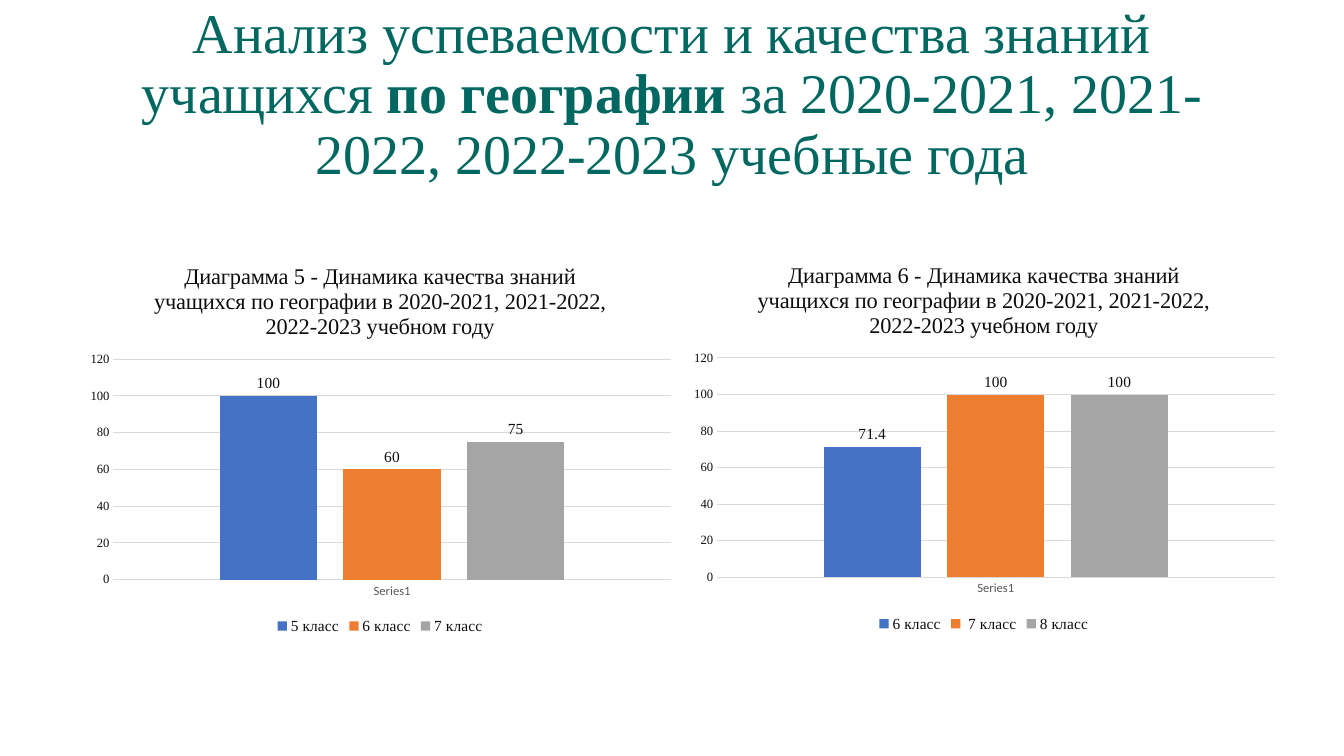
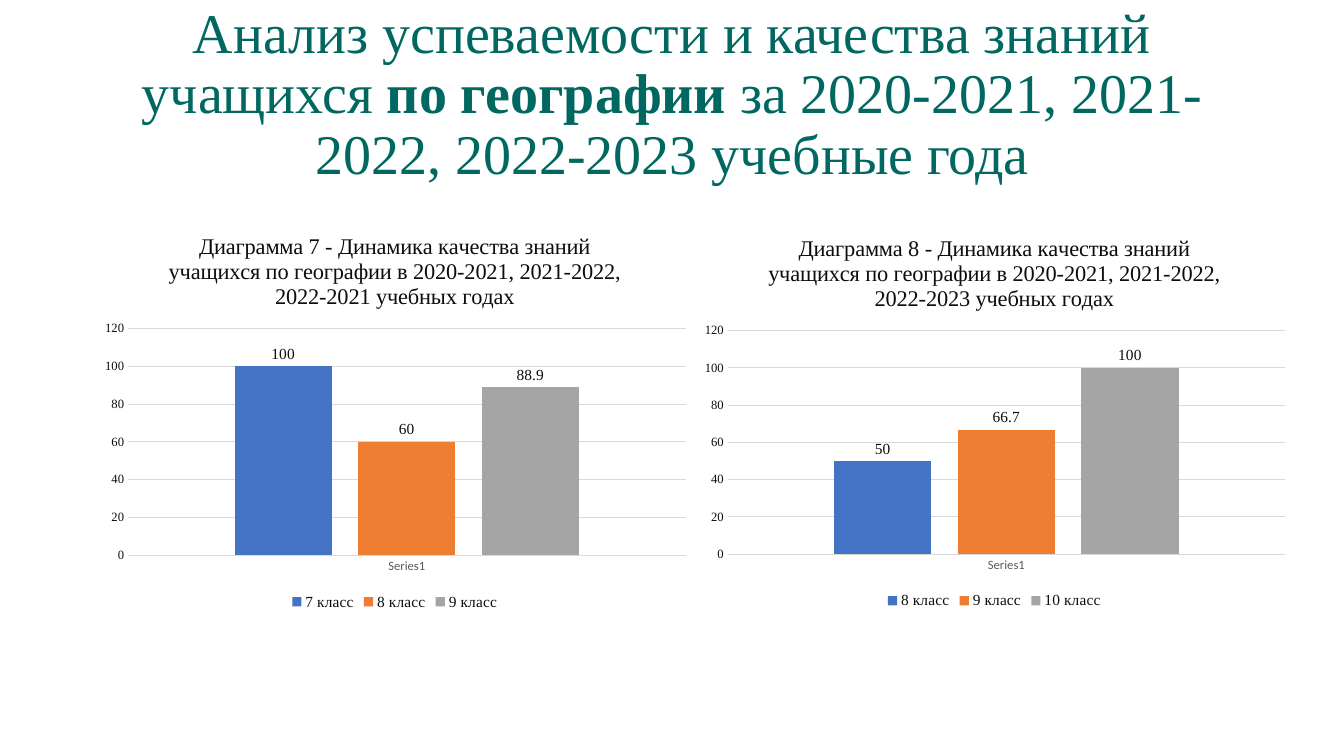
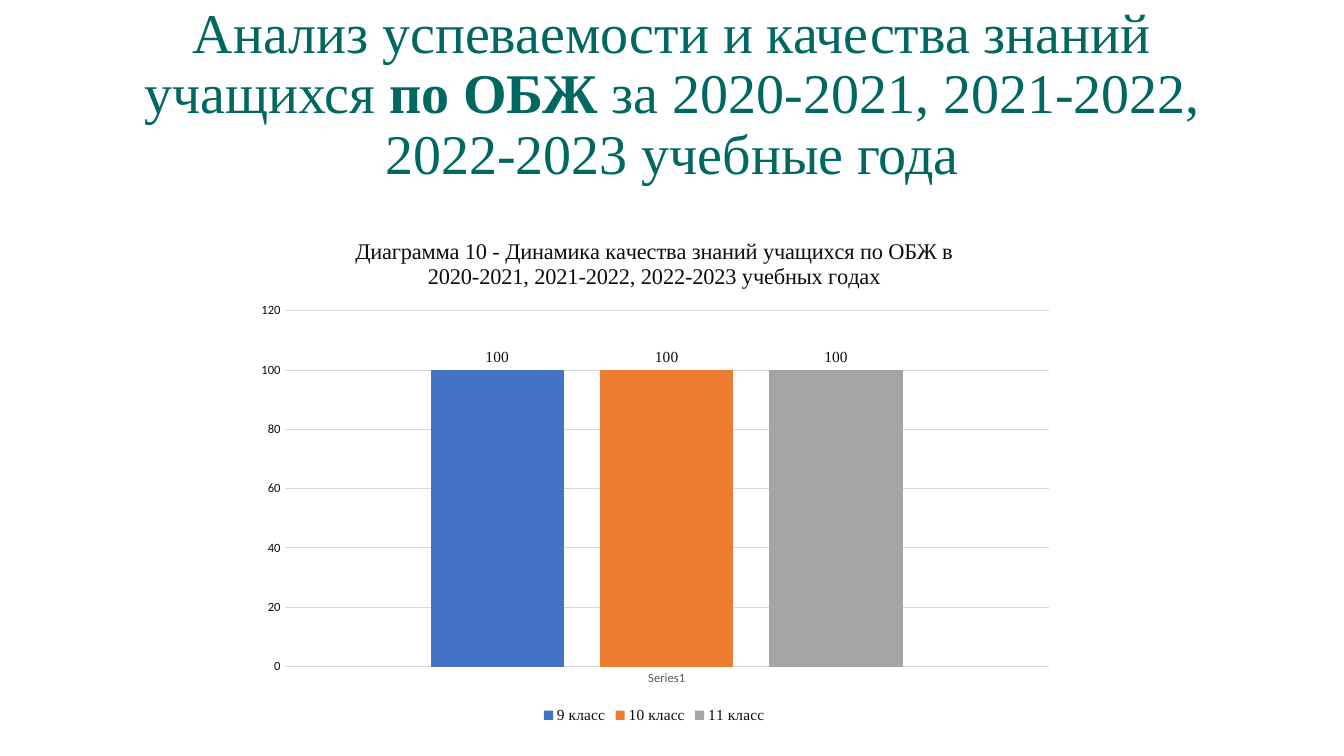
from lxml import etree
from pptx import Presentation
from pptx import util as u
from pptx.chart.data import CategoryChartData
from pptx.dml.color import RGBColor
from pptx.enum import chart as charts, text
from pptx.oxml.ns import qn

PX = 9525
SERIF = "Times New Roman"
SANS = "Calibri"
GREEN = RGBColor(0x00, 0x68, 0x61)
INK = RGBColor(0x0D, 0x0D, 0x0D)
GREY = RGBColor(0x59, 0x59, 0x59)
GRID = RGBColor(0xD9, 0xD9, 0xD9)
COLUMN_COLOURS = (
    RGBColor(0x44, 0x72, 0xC4),
    RGBColor(0xED, 0x7D, 0x31),
    RGBColor(0xA5, 0xA5, 0xA5),
)

# Margins of the plot inside its chart: left, top, right, bottom
HALF_MARGINS = (34, 109, 11, 56)
WIDE_MARGINS = (38, 89, 14, 58)

GEOGRAPHY = "учащихся по географии в 2020-2021, 2021-2022,"


def px(length):
    return u.Emu(length * PX)


def set_font(font, size, colour=INK, name=SERIF):
    font.name = name
    font.size = u.Pt(size)
    font.bold = False
    font.color.rgb = colour


def set_line(line, colour=GRID):
    line.color.rgb = colour
    line.width = u.Pt(0.75)


def add_page(deck, subject):
    """Add a page whose title has the subject in bold."""
    page = deck.slides.add_slide(deck.slide_layouts[5])
    box = page.shapes.title
    box.left, box.top, box.width, box.height = map(px, (88, 0, 1104, 50))
    frame = box.text_frame
    frame.auto_size = text.MSO_AUTO_SIZE.NONE
    frame.vertical_anchor = text.MSO_ANCHOR.TOP
    frame.word_wrap = True
    para = frame.paragraphs[0]
    para.alignment = text.PP_ALIGN.CENTER
    para.line_spacing = 0.9
    set_font(para.font, 40, GREEN)
    for words, bold in (
        ("Анализ успеваемости и качества знаний учащихся ", False),
        (f"по {subject} ", True),
        ("за 2020-2021, 2021-2022, 2022-2023 учебные года", False),
    ):
        span = para.add_run()
        span.text = words
        span.font.bold = bold
    return page


def set_layout(parent, **places):
    """Place a chart part by fractions of the chart's size."""
    layout = parent.find(qn("c:layout"))
    if layout is None:
        layout = etree.Element(qn("c:layout"))
        before = parent.find(qn("c:tx"))
        parent.insert(0 if before is None else parent.index(before) + 1, layout)
    manual = etree.SubElement(layout, qn("c:manualLayout"))
    if "w" in places:
        etree.SubElement(manual, qn("c:layoutTarget"), val="inner")
    for key in ("x", "y"):
        etree.SubElement(manual, qn(f"c:{key}Mode"), val="edge")
    for key, value in places.items():
        etree.SubElement(manual, qn(f"c:{key}"), val=f"{value:.4f}")


def style_axes(chart, value_font):
    category, value = chart.category_axis, chart.value_axis
    for axis in (category, value):
        axis.major_tick_mark = charts.XL_TICK_MARK.NONE
        axis.minor_tick_mark = charts.XL_TICK_MARK.NONE
    set_font(category.tick_labels.font, 9, GREY, SANS)
    set_line(category.format.line)
    set_font(value.tick_labels.font, 9, INK, value_font)
    value.format.line.fill.background()
    value.minimum_scale, value.maximum_scale, value.major_unit = 0, 120, 20
    value.has_major_gridlines = True
    set_line(value.major_gridlines.format.line)


def add_column_chart(page, place, title, columns,
                     margins=HALF_MARGINS, value_font=SERIF):
    data = CategoryChartData()
    data.categories = ["Series1"]
    for name, value in columns:
        data.add_series(name, [value])
    chart = page.shapes.add_chart(
        charts.XL_CHART_TYPE.COLUMN_CLUSTERED, *map(px, place), data).chart
    set_font(chart.font, 10, RGBColor(0, 0, 0), SANS)

    chart.has_title = True
    para = chart.chart_title.text_frame.paragraphs[0]
    para.text = title
    set_font(para.font, 16)
    chart.chart_title.include_in_layout = False

    chart.has_legend = True
    chart.legend.position = charts.XL_LEGEND_POSITION.BOTTOM
    chart.legend.include_in_layout = False
    set_font(chart.legend.font, 11)

    plot = chart.plots[0]
    plot.gap_width, plot.overlap = 219, -27
    plot.vary_by_categories = False
    for series, colour in zip(plot.series, COLUMN_COLOURS):
        series.format.fill.solid()
        series.format.fill.fore_color.rgb = colour
        labels = series.data_labels
        labels.show_value = True
        labels.position = charts.XL_LABEL_POSITION.OUTSIDE_END
        set_font(labels.font, 11)
    style_axes(chart, value_font)

    width, height = place[2:]
    left, top, right, bottom = margins
    area = chart.element.find(f".//{qn('c:plotArea')}")
    set_layout(area, x=left / width, y=top / height,
               w=(width - left - right) / width,
               h=(height - top - bottom) / height)


def main():
    deck = Presentation()
    deck.slide_width, deck.slide_height = px(1280), px(720)

    page = add_page(deck, "географии")
    add_column_chart(
        page, (74, 233, 576, 375),
        f"Диаграмма 5 - Динамика качества знаний {GEOGRAPHY} 2022-2023 учебном году",
        [("5 класс", 100), ("6 класс", 60), ("7 класс", 75)])
    add_column_chart(
        page, (649, 232, 576, 374),
        f"Диаграмма 6 - Динамика качества знаний {GEOGRAPHY} 2022-2023 учебном году",
        [("6 класс", 71.4), (" 7 класс", 100), ("8 класс", 100)])

    page = add_page(deck, "географии")
    add_column_chart(
        page, (88, 204, 576, 381),
        f"Диаграмма 7 - Динамика качества знаний {GEOGRAPHY} 2022-2021 учебных годах",
        [("7 класс", 100), ("8 класс", 60), ("9 класс", 88.9)])
    add_column_chart(
        page, (659, 206, 576, 378),
        f"Диаграмма 8 - Динамика качества знаний {GEOGRAPHY} 2022-2023 учебных годах",
        [("8 класс", 50), ("9 класс", 66.7), ("10 класс", 100)])

    page = add_page(deck, "ОБЖ")
    add_column_chart(
        page, (233, 207, 780, 486),
        "Диаграмма 10 - Динамика качества знаний учащихся по ОБЖ в "
        "2020-2021, 2021-2022, 2022-2023 учебных годах",
        [("9 класс", 100), ("10 класс", 100), ("11 класс", 100)],
        WIDE_MARGINS, SANS)

    deck.save("out.pptx")


if __name__ == "__main__":
    main()
